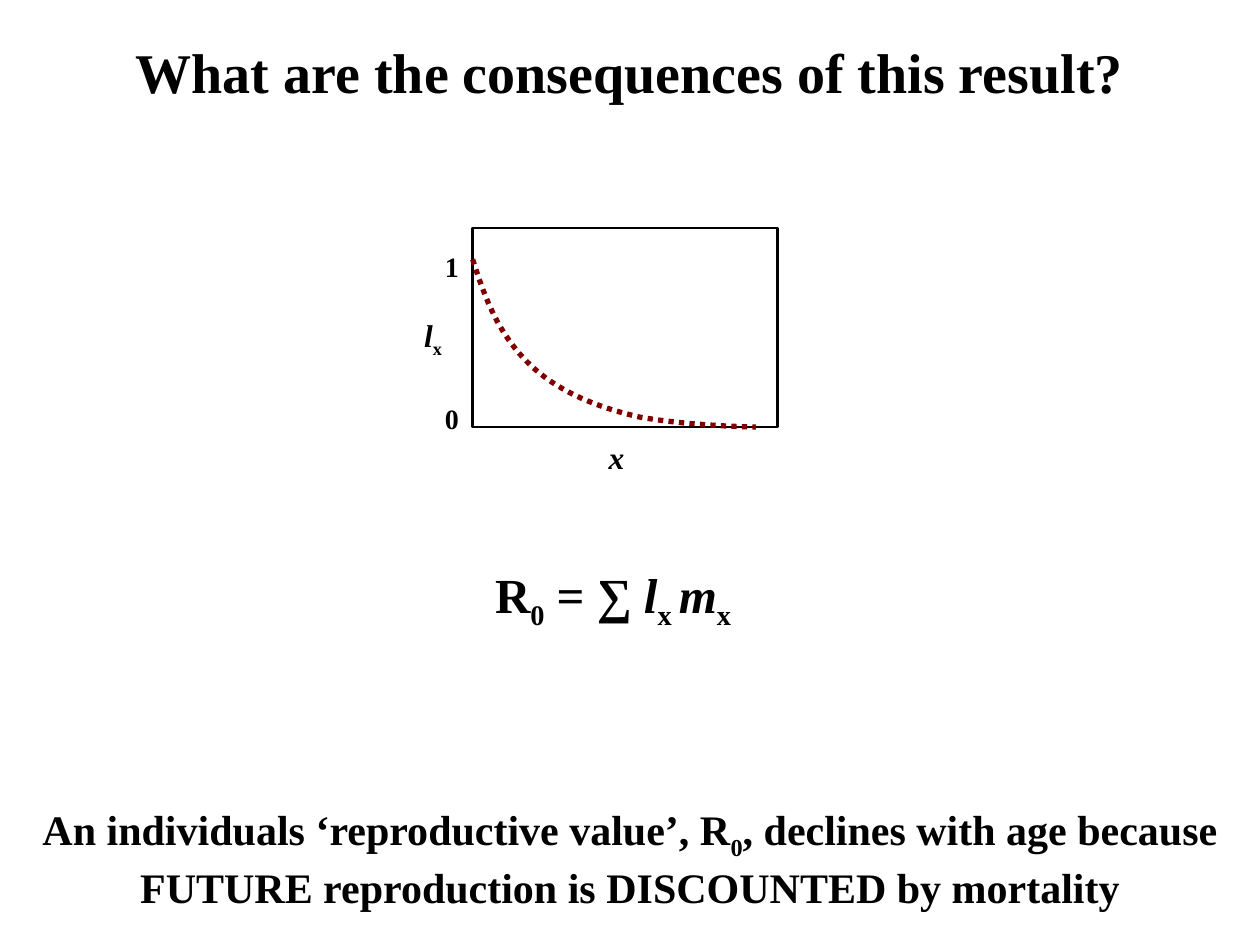
from pptx import Presentation
from pptx.dml.color import RGBColor
from pptx.enum.dml import MSO_LINE
from pptx.enum.shapes import MSO_SHAPE
from pptx.enum.text import MSO_AUTO_SIZE as AutoSize, PP_ALIGN as Align
from pptx.util import Cm, Pt

COLORS = {"ink": "000000", "curve": "800000"}
FONT = "Times New Roman"
STYLES = {
    "plain": {},
    "italic": {"italic": True},
    "sub": {},
}
SUBSCRIPT = "-25000"


def bezier_points(start, segments, steps=12):
    points = [start]
    for first, second, end in segments:
        origin = points[-1]
        for step in range(1, steps + 1):
            t = step / steps
            weights = ((1 - t) ** 3, 3 * t * (1 - t) ** 2, 3 * t**2 * (1 - t), t**3)
            corners = (origin, first, second, end)
            points.append(
                tuple(sum(w * c[axis] for w, c in zip(weights, corners)) for axis in (0, 1))
            )
    return points


class SlideBuilder:
    def __init__(self, slide):
        self.slide = slide

    def color(self, name):
        return RGBColor.from_string(COLORS[name])

    def outline(self, shape, color, width, dash=None):
        shape.shadow.inherit = False
        shape.fill.background()
        shape.line.color.rgb = self.color(color)
        for name, value in {"width": Pt(width), "dash_style": dash}.items():
            setattr(shape.line, name, value)

    def text(self, box, size, paragraphs, align=Align.LEFT, wrap=False):
        shape = self.slide.shapes.add_textbox(*map(Cm, box))
        frame = shape.text_frame
        for name, value in {"word_wrap": wrap, "auto_size": AutoSize.SHAPE_TO_FIT_TEXT}.items():
            setattr(frame, name, value)
        for index, runs in enumerate(paragraphs):
            paragraph = frame.add_paragraph() if index else frame.paragraphs[0]
            paragraph.alignment = align
            for content, style in runs:
                self.run(paragraph, content, style, size)

    def run(self, paragraph, content, style, size):
        run = paragraph.add_run()
        run.text = content
        run.font.color.rgb = self.color("ink")
        values = {"name": FONT, "size": Pt(size), "bold": True, **STYLES[style]}
        for name, value in values.items():
            setattr(run.font, name, value)
        if style == "sub":
            run._r.get_or_add_rPr().set("baseline", SUBSCRIPT)

    def frame(self, box):
        shape = self.slide.shapes.add_shape(MSO_SHAPE.RECTANGLE, *map(Cm, box))
        self.outline(shape, "ink", 1.5)

    def curve(self, start, segments):
        points = [(Cm(x), Cm(y)) for x, y in bezier_points(start, segments)]
        builder = self.slide.shapes.build_freeform(*points[0])
        builder.add_line_segments(points[1:], close=False)
        self.outline(builder.convert_to_shape(), "curve", 3, MSO_LINE.ROUND_DOT)


def main():
    presentation = Presentation()
    presentation.slide_width, presentation.slide_height = Cm(25.4), Cm(19.05)
    builder = SlideBuilder(presentation.slides.add_slide(presentation.slide_layouts[6]))

    title = [[("What are the consequences of this result?", "plain")]]
    builder.text((0, 0.64, 25.4, 1.6), 32, title, Align.CENTER, True)

    builder.frame((9.53, 4.6, 6.15, 4.01))
    builder.text((8.3, 6.25, 0.9, 1.02), 18, [[("l", "italic"), ("x", "sub")]])
    builder.text((12.02, 8.71, 0.84, 1.02), 18, [[("x", "italic")]])
    for label, top in (("1", 4.9), ("0", 7.98)):
        builder.text((8.72, top, 0.79, 0.94), 16, [[(label, "plain")]])
    builder.curve(
        (9.53, 5.23),
        [
            ((9.7, 5.77), (9.88, 6.27), (10.16, 6.71)),
            ((10.44, 7.14), (10.77, 7.49), (11.23, 7.77)),
            ((11.68, 8.05), (12.24, 8.26), (12.9, 8.41)),
            ((13.59, 8.53), (14.4, 8.59), (15.24, 8.61)),
        ],
    )

    formula = [
        ("R", "plain"),
        ("0", "sub"),
        (" = ∑ ", "plain"),
        ("l", "italic"),
        ("x ", "sub"),
        ("m", "italic"),
        ("x", "sub"),
    ]
    builder.text((9.73, 11.25, 5.46, 1.45), 28, [formula])

    conclusion = [
        [
            ("An individuals ‘reproductive value’, R", "plain"),
            ("0", "sub"),
            (", declines with age because", "plain"),
        ],
        [("FUTURE reproduction is DISCOUNTED by mortality", "plain")],
    ]
    builder.text((0, 16.08, 25.4, 2.29), 24, conclusion, Align.CENTER, True)

    presentation.save("out.pptx")


if __name__ == "__main__":
    main()
